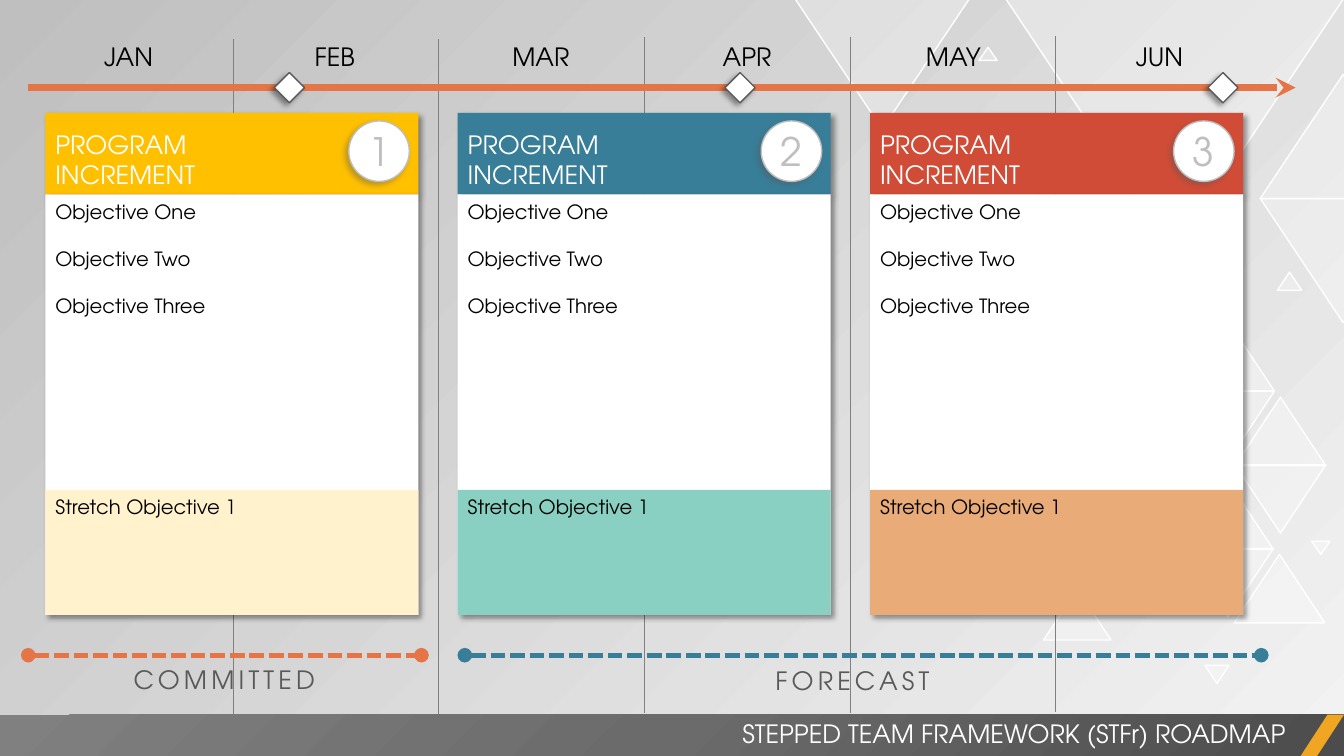
from dataclasses import dataclass

from pptx import Presentation, util as u
from pptx.dml.color import RGBColor
from pptx.enum import dml, shapes, text
from pptx.oxml import parse_xml
from pptx.oxml.ns import nsdecls, qn
from pptx.oxml.xmlchemy import OxmlElement

Inches = u.Inches
SHAPE = shapes.MSO_SHAPE
ALIGN = text.PP_ALIGN
ANCHOR = text.MSO_ANCHOR


@dataclass(frozen=True)
class Theme:
    font: str = "TeX Gyre Adventor"
    white: str = "FFFFFF"
    black: str = "000000"
    grey: str = "595959"
    silver: str = "BFBFBF"
    pale: str = "F2F2F2"
    divider: str = "808080"
    orange: str = "E57546"
    teal: str = "387E99"
    amber: str = "F0A622"
    footer: tuple = ("4C4C4C", "6B6B6B", "808080")
    # Header and stretch colour of each increment
    cards: tuple = (("FFC000", "FFF2CC"), ("387E99", "89D0C2"), ("D14C36", "E9AB77"))
    heading: int = 18
    body: int = 14
    number: int = 28


THEME = Theme()
MONTHS = ("JAN", "FEB", "MAR", "APR", "MAY", "JUN")
OBJECTIVES = ("Objective One", "Objective Two", "Objective Three")
CARD_LEFT, CARD_PITCH, CARD_WIDTH = 0.45, 4.09, 3.7

# Left, top, width, height, points down
TRIANGLES = (
    (9.04, 1.33, 1.64, 1.23, False), (9.97, -0.02, 3.36, 2.52, True),
    (12.24, 5.5, 0.9, 0.68, False), (11.73, 5.44, 0.9, 0.68, True),
    (11.73, 4.77, 0.9, 0.68, False), (11.74, 3.2, 0.9, 0.68, False),
    (11.74, 3.88, 0.9, 0.68, True), (12.25, 3.94, 0.9, 0.68, False),
    (12.25, 4.61, 0.9, 0.68, True), (10.35, 5.85, 0.67, 0.5, False),
    (12.5, 0.74, 1.64, 1.23, False), (12.5, 1.97, 1.64, 1.23, True),
    (11.95, 6.6, 0.24, 0.18, True), (8.92, 1.81, 0.24, 0.18, True),
    (12.67, 2.7, 0.24, 0.18, False), (9.71, 0.47, 0.18, 0.13, False),
    (13.01, 5.37, 0.18, 0.13, True), (7.88, -0.02, 1.74, 1.3, True),
)


def rgb(value):
    return RGBColor.from_string(value)


def add_child(parent, tag, **attributes):
    child = OxmlElement(tag)
    for name, value in attributes.items():
        child.set(name, str(value))
    parent.append(child)
    return child


def add_shadow(shape, color, degrees):
    effects = shape._element.spPr.find(qn("a:effectLst"))
    shadow = add_child(effects, "a:outerShdw", blurRad=u.Pt(4), dist=u.Pt(3),
                       dir=degrees * 60000, algn="ctr", rotWithShape=0)
    add_child(add_child(shadow, "a:srgbClr", val=color), "a:alpha", val=40000)


def add_box(parent, kind, at, fill, line=None, shadow=None):
    shape = parent.shapes.add_shape(kind, *map(Inches, at))
    shape.shadow.inherit = False
    shape.fill.solid()
    shape.fill.fore_color.rgb = rgb(fill)
    if line:
        shape.line.color.rgb = rgb(line)
        shape.line.width = u.Pt(1)
    else:
        shape.line.fill.background()
    if shadow:
        add_shadow(shape, *shadow)
    return shape


def write(box, lines, size, color, align=ALIGN.LEFT, anchor=ANCHOR.TOP, gap=0, spacing=0):
    frame = box.text_frame
    frame.word_wrap = True
    frame.vertical_anchor = anchor
    look = {"name": THEME.font, "size": u.Pt(size)}
    for index, line in enumerate(lines):
        para = frame.add_paragraph() if index else frame.paragraphs[0]
        para.alignment = align
        if index and gap:
            para.space_before = u.Pt(gap)
        span = para.add_run()
        span.text = line
        for name, value in look.items():
            setattr(span.font, name, value)
        span.font.color.rgb = rgb(color)
        if spacing:
            span.font._element.set("spc", str(spacing * 100))


def add_label(page, at, words, color, align=ALIGN.CENTER, spacing=0):
    box = page.shapes.add_textbox(*map(Inches, at))
    write(box, [words], THEME.heading, color, align, spacing=spacing)
    box.text_frame.auto_size = text.MSO_AUTO_SIZE.SHAPE_TO_FIT_TEXT


def add_line(parent, start, end, color, width, dash=None, head=None, tail=None):
    line = parent.shapes.add_connector(
        shapes.MSO_CONNECTOR.STRAIGHT, *map(Inches, (*start, *end)))
    line.line.color.rgb = rgb(color)
    line.line.width = u.Pt(width)
    if dash:
        line.line.dash_style = dash
    for tag, kind in (("a:headEnd", head), ("a:tailEnd", tail)):
        if kind:
            add_child(line.line._get_or_add_ln(), tag, type=kind)
    add_child(line._element.spPr, "a:effectLst")


def add_backdrop(page):
    fill = page.background.fill
    fill.gradient()
    fill.gradient_angle = 135
    for stop, color in zip(fill.gradient_stops, (THEME.pale, THEME.silver)):
        stop.color.rgb = rgb(color)
    group = page.shapes.add_group_shape()
    for *at, down in TRIANGLES:
        triangle = add_box(group, SHAPE.ISOSCELES_TRIANGLE, at, THEME.white, THEME.white)
        triangle.rotation = 180 if down else 0
        color = triangle._element.spPr.find(qn("a:solidFill"))[0]
        add_child(color, "a:alpha", val=30000)


def add_footer(page):
    bar = add_box(page, SHAPE.RECTANGLE, (0, 7.09, 13.33, 0.41), THEME.footer[0])
    stops = "".join(f'<a:gs pos="{i * 50000}"><a:srgbClr val="{color}"/></a:gs>'
                    for i, color in enumerate(THEME.footer))
    gradient = parse_xml(
        f'<a:gradFill {nsdecls("a")}><a:gsLst>{stops}</a:gsLst><a:path path="circle">'
        '<a:fillToRect l="100000" t="100000"/></a:path></a:gradFill>')
    properties = bar._element.spPr
    properties.replace(properties.find(qn("a:solidFill")), gradient)
    slash = add_box(page, SHAPE.PARALLELOGRAM, (12.9, 7.09, 0.43, 0.41), THEME.amber)
    slash.adjustments[0] = 0.65
    add_label(page, (5.25, 7.08, 7.6, 0.4), "STEPPED TEAM FRAMEWORK (STFr) ROADMAP",
              THEME.white, ALIGN.RIGHT)


def add_timeline(page):
    dividers = page.shapes.add_group_shape()
    for index, top in enumerate((0.39, 0.39, 0.37, 0.37, 0.36)):
        x = 2.31 + 2.04 * index
        add_line(dividers, (x, top), (x, top + 6.7), THEME.divider, 0.5)
    add_line(page, (0.28, 0.87), (12.85, 0.87), THEME.orange, 4.75, tail="stealth")
    for index, month in enumerate(MONTHS):
        add_label(page, (0.52 + CARD_PITCH / 2 * index, 0.36, 1.51, 0.4), month, THEME.black)
    for left in (2.72, 7.19, 11.98):
        add_box(page, SHAPE.DIAMOND, (left, 0.72, 0.3, 0.3), THEME.white, THEME.grey,
                (THEME.black, 135))


def add_increment(page, index, header_color, stretch_color):
    left = CARD_LEFT + CARD_PITCH * index
    card = page.shapes.add_group_shape()
    shadow = (THEME.black, 45)
    header = add_box(card, SHAPE.RECTANGLE, (left, 1.12, CARD_WIDTH, 0.81), header_color,
                     shadow=shadow)
    write(header, ("PROGRAM", "INCREMENT"), THEME.heading, THEME.white, anchor=ANCHOR.BOTTOM)
    body = add_box(card, SHAPE.RECTANGLE, (left, 1.93, CARD_WIDTH, 4.17), THEME.white,
                   shadow=shadow)
    write(body, OBJECTIVES, THEME.body, THEME.black, gap=16.8)
    badge = add_box(card, SHAPE.OVAL, (left + 3.01, 1.2, 0.6, 0.6), THEME.white, THEME.silver,
                    (THEME.grey, 135))
    write(badge, [str(index + 1)], THEME.number, THEME.silver, ALIGN.CENTER, ANCHOR.MIDDLE)
    for side in ("left", "top", "right", "bottom"):
        setattr(badge.text_frame, f"margin_{side}", 0)
    stretch = add_box(card, SHAPE.RECTANGLE, (left, 4.86, CARD_WIDTH, 1.24), stretch_color)
    write(stretch, ["Stretch Objective 1"], THEME.body, THEME.black)


def add_span(page, start, end, color, label, label_at):
    add_line(page, (start, 6.5), (end, 6.5), color, 3.5, dml.MSO_LINE.SQUARE_DOT,
             "oval", "oval")
    add_label(page, (*label_at, 2.65, 0.4), label, THEME.grey, spacing=3)


def main():
    deck = Presentation()
    deck.slide_width, deck.slide_height = Inches(13.33), Inches(7.5)
    page = deck.slides.add_slide(deck.slide_layouts[6])
    add_backdrop(page)
    add_timeline(page)
    add_footer(page)
    for index, colors in enumerate(THEME.cards):
        add_increment(page, index, *colors)
    add_span(page, 0.28, 4.18, THEME.orange, "COMMITTED", (0.9, 6.54))
    add_span(page, 4.61, 12.51, THEME.teal, "FORECAST", (7.13, 6.55))
    deck.save("out.pptx")


if __name__ == "__main__":
    main()
